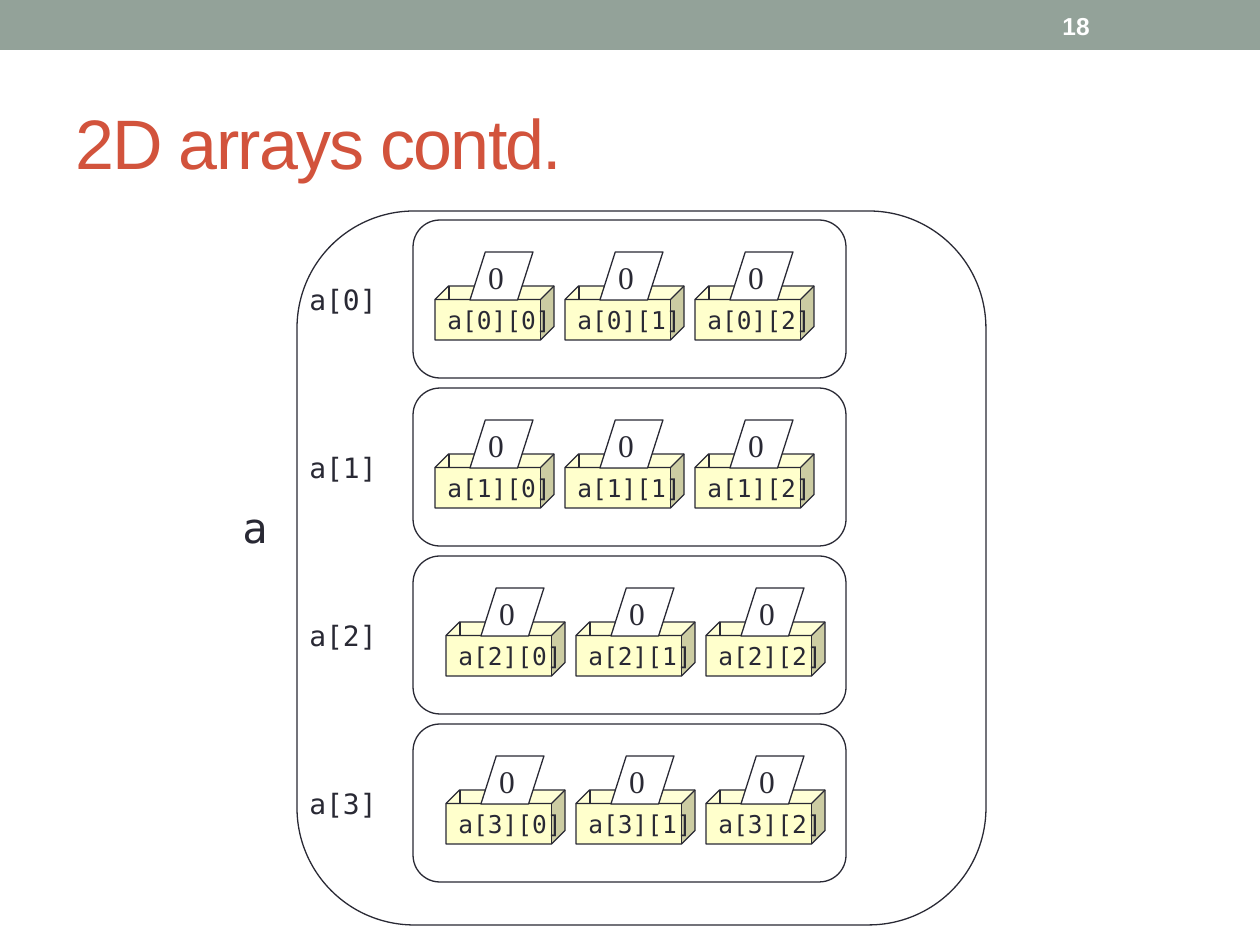
from pptx import Presentation
from pptx.dml.color import RGBColor
from pptx.enum.shapes import MSO_CONNECTOR, MSO_SHAPE as SHAPE
from pptx.enum.text import MSO_ANCHOR as ANCHOR, PP_ALIGN
from pptx.oxml.ns import qn
from pptx.util import Emu, Pt

PX = 914400 / 126
COLORS = {"bar": "93A299", "title": "D2533C", "ink": "292934",
          "box": "FFFFCC", "white": "FFFFFF"}
SANS, MONO, SERIF = "Arial", "DejaVu Sans Mono", "Times New Roman"

TITLE = "2D arrays contd."
PAGE_NUMBER = "18"
ARRAY = "a"
VALUES = [[0, 0, 0], [0, 0, 0], [0, 0, 0], [0, 0, 0]]

ROW_LEFT, ROW_TOP, ROW_PITCH = 413, 220, 168
BOX_LEFTS = [435, 435, 446, 446]  # first box of each row
BOX_PITCH = 130


def px(*lengths):
    return [Emu(round(length * PX)) for length in lengths]


def color(name):
    return RGBColor.from_string(COLORS[name])


def write(shape, text, size, font, ink="ink", anchor=ANCHOR.TOP, wrap=True):
    """Put one left-aligned line of text in a shape and return its run."""
    frame = shape.text_frame
    frame.word_wrap = wrap
    frame.vertical_anchor = anchor
    line = frame.paragraphs[0]
    line.text = text
    line.alignment = PP_ALIGN.LEFT
    run = line.runs[0]
    run.font.size = Pt(size)
    run.font.name = font
    run.font.color.rgb = color(ink)
    return run


def add_label(shapes, at, *args, **options):
    return write(shapes.add_textbox(*px(*at)), *args, **options)


def add_outline(shapes, preset, at, adjust=None, fill=None, line="ink"):
    shape = shapes.add_shape(preset, *px(*at))
    shape.shadow.inherit = False
    if adjust is not None:
        shape.adjustments[0] = adjust
    if fill:
        shape.fill.solid()
        shape.fill.fore_color.rgb = color(fill)
    else:
        shape.fill.background()
    if line:
        shape.line.color.rgb = color(line)
        shape.line.width = Pt(0.75)
    else:
        shape.line.fill.background()
    return shape


def add_edge(shapes, x, top, bottom):
    edge = shapes.add_connector(MSO_CONNECTOR.STRAIGHT, *px(x, top, x, bottom))
    edge.line.color.rgb = color("ink")
    edge.line.width = Pt(0.75)
    properties = edge._element.spPr
    properties.append(properties.makeelement(qn("a:effectLst"), {}))


def add_element(shapes, x, y, name, value):
    """Draw a named box with a card holding its value; x, y is the box corner."""
    box = add_outline(shapes, SHAPE.CUBE, (x, y, 119, 54), 0.25, "box")
    write(box, name, 14, MONO, anchor=ANCHOR.MIDDLE, wrap=False)
    add_outline(shapes, SHAPE.PARALLELOGRAM, (x + 35, y - 34, 63, 48), 0.32, "white")
    add_edge(shapes, x + 14, y, y + 14)
    add_label(shapes, (x + 33, y - 34, 66, 50), f" {value}", 18, SERIF)


def main():
    deck = Presentation()
    deck.slide_width, deck.slide_height = px(1260, 945)
    slide = deck.slides.add_slide(deck.slide_layouts[6])
    shapes = slide.shapes

    add_outline(shapes, SHAPE.RECTANGLE, (0, 0, 1260, 50), fill="bar", line=None)
    title = add_label(shapes, (63, 73, 1134, 136), TITLE, 40, SANS, "title", ANCHOR.MIDDLE)
    title.font._element.set("spc", "-100")
    number = add_label(shapes, (1050, 3, 147, 45), PAGE_NUMBER, 14, SANS, "white",
                       ANCHOR.MIDDLE)
    number.font.bold = True

    for i, (values, box_left) in enumerate(zip(VALUES, BOX_LEFTS)):
        top = ROW_TOP + i * ROW_PITCH
        row = shapes.add_group_shape().shapes
        for j, value in enumerate(values):
            add_element(row, box_left + j * BOX_PITCH, top + 66,
                        f"{ARRAY}[{i}][{j}]", value)
        add_outline(row, SHAPE.ROUNDED_RECTANGLE, (ROW_LEFT, top, 433, 158), 0.17)
        add_label(shapes, (297, top + 56, 97, 47), f"{ARRAY}[{i}]", 16, MONO)

    add_outline(shapes, SHAPE.ROUNDED_RECTANGLE, (297, 211, 689, 714), 0.17)
    add_label(shapes, (230, 495, 49, 63), ARRAY, 24, MONO)

    deck.save("out.pptx")


if __name__ == "__main__":
    main()
